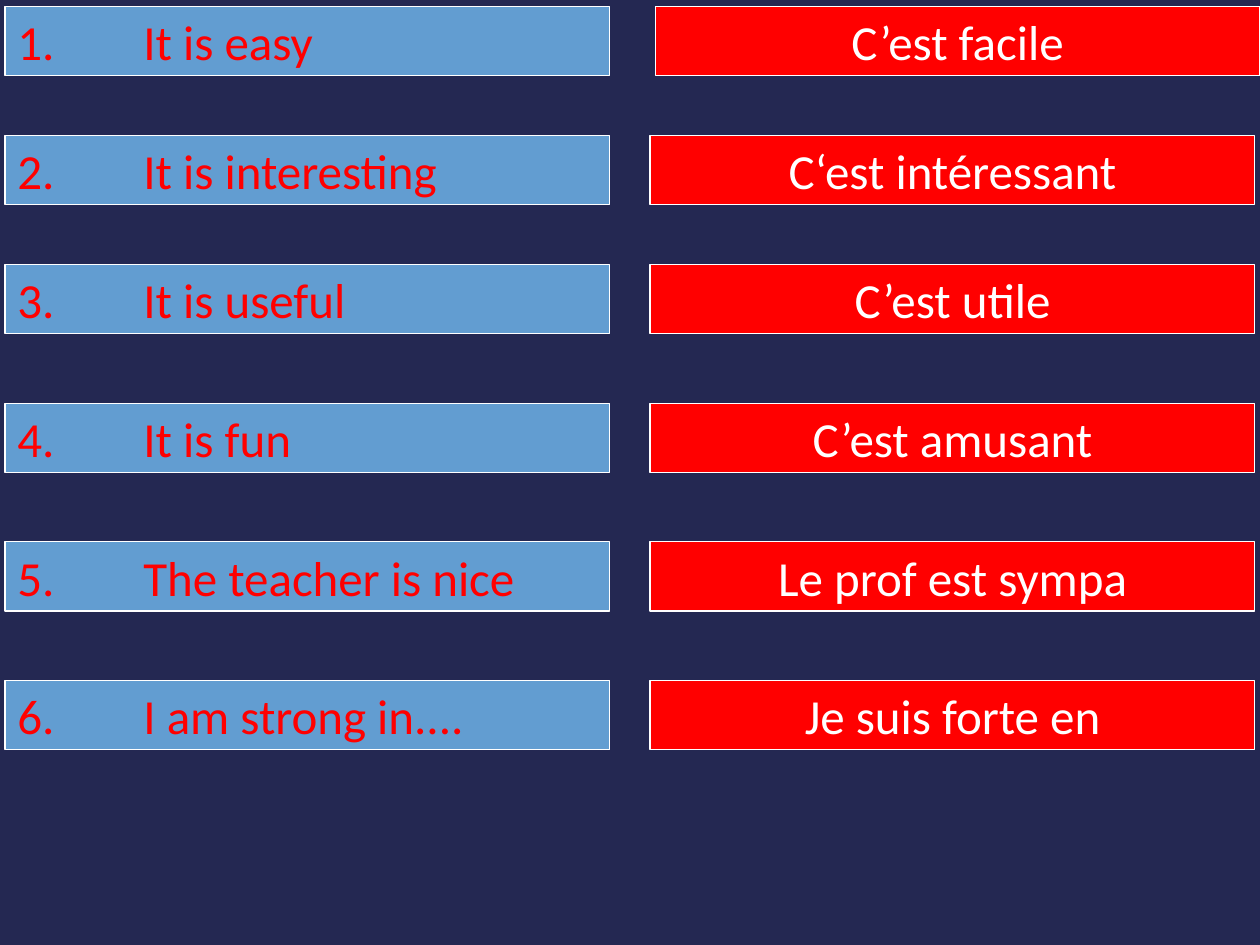
import pptx
import pptx.util
import pptx.dml.color
import pptx.enum.shapes
import pptx.enum.text
import pptx.oxml.ns
import lxml.etree

Inch = pptx.util.Inches
Align = pptx.enum.text.PP_ALIGN
tag = pptx.oxml.ns.qn


def paint(fill, tone):
    fill.solid()
    fill.fore_color.rgb = pptx.dml.color.RGBColor.from_string(tone)


deck = pptx.Presentation()
deck.slide_width, deck.slide_height = Inch(10), Inch(7.5)
slide = deck.slides.add_slide(deck.slide_layouts[6])
paint(slide.background.fill, "242852")

wide, high, edge = 4.8, 0.55, 0.04
tops = [0.05 + 1.025 * n for n in range(3)] + [3.2 + 1.1 * n for n in range(3)]
pairs = [
    ("It is easy", "C’est facile"),
    ("It is interesting", "C‘est intéressant"),
    ("It is useful", "C’est utile"),
    ("It is fun", "C’est amusant"),
    ("The teacher is nice", "Le prof est sympa"),
    ("I am strong in....", "Je suis forte en"),
]
frame = {"word_wrap": True, "vertical_anchor": pptx.enum.text.MSO_ANCHOR.MIDDLE}
face = {"name": "Calibri", "size": pptx.util.Pt(28)}

for row, (top, (term, reply)) in enumerate(zip(tops, pairs)):
    right = 10 - wide - (edge if row else 0)
    cells = [
        (edge, f"{row + 1}.\t{term}", "629DD1", "FF0000", Align.LEFT),
        (right, reply, "FF0000", "FFFFFF", Align.CENTER),
    ]
    for left, words, back, ink, align in cells:
        box = slide.shapes.add_shape(
            pptx.enum.shapes.MSO_SHAPE.RECTANGLE,
            Inch(left), Inch(top), Inch(wide), Inch(high))
        box.shadow.inherit = False
        paint(box.fill, back)
        paint(box.line.fill, "FFFFFF")
        box.line.width = pptx.util.Pt(0.75)
        text = box.text_frame
        para = text.paragraphs[0]
        para.alignment = align
        if align == Align.LEFT:
            stops = lxml.etree.SubElement(para._p.get_or_add_pPr(), tag("a:tabLst"))
            lxml.etree.SubElement(stops, tag("a:tab"), pos=str(Inch(1)), algn="l")
        run = para.add_run()
        run.text = words
        paint(run.font.fill, ink)
        for part, form in ((text, frame), (run.font, face)):
            for key, value in form.items():
                setattr(part, key, value)

deck.save("out.pptx")
